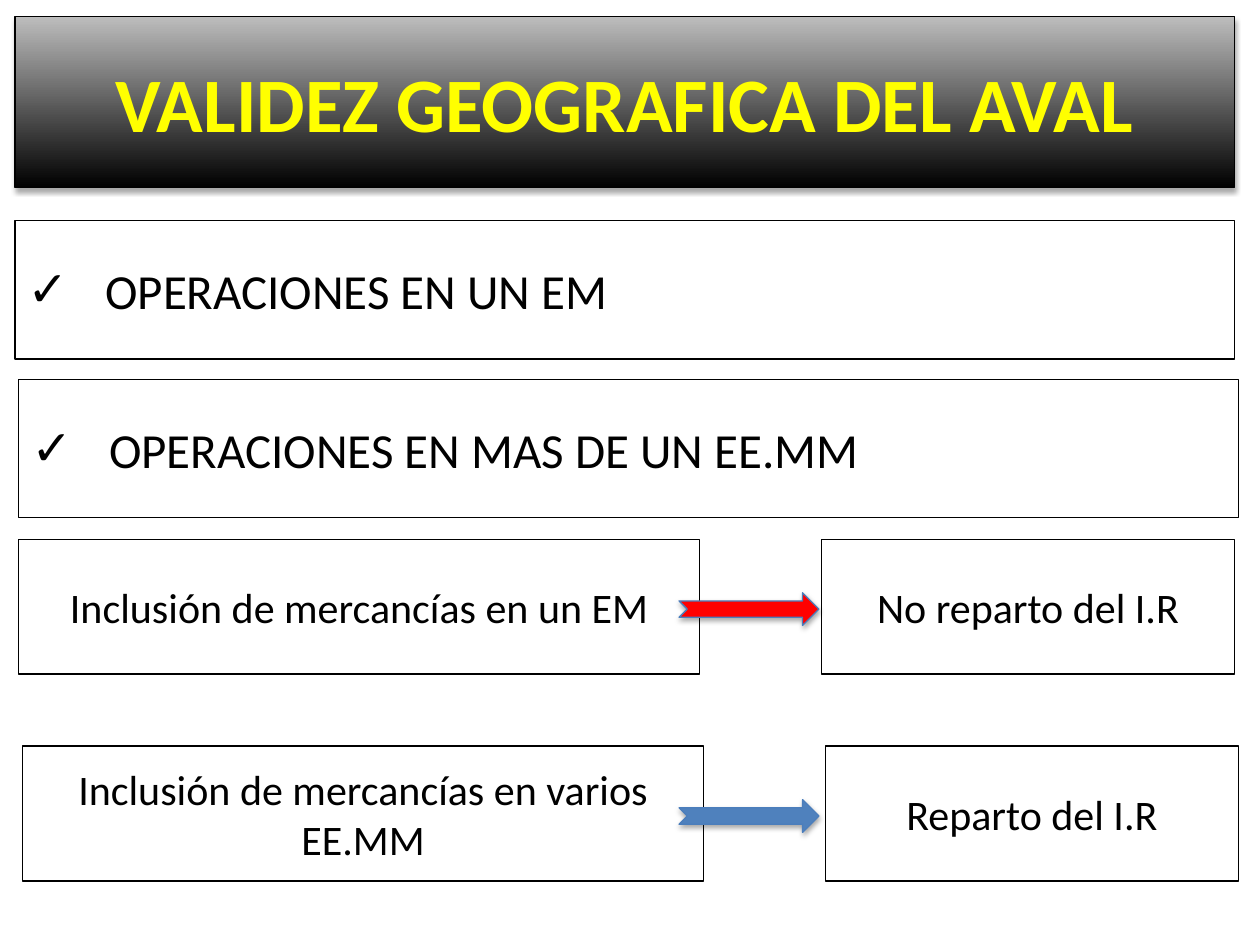
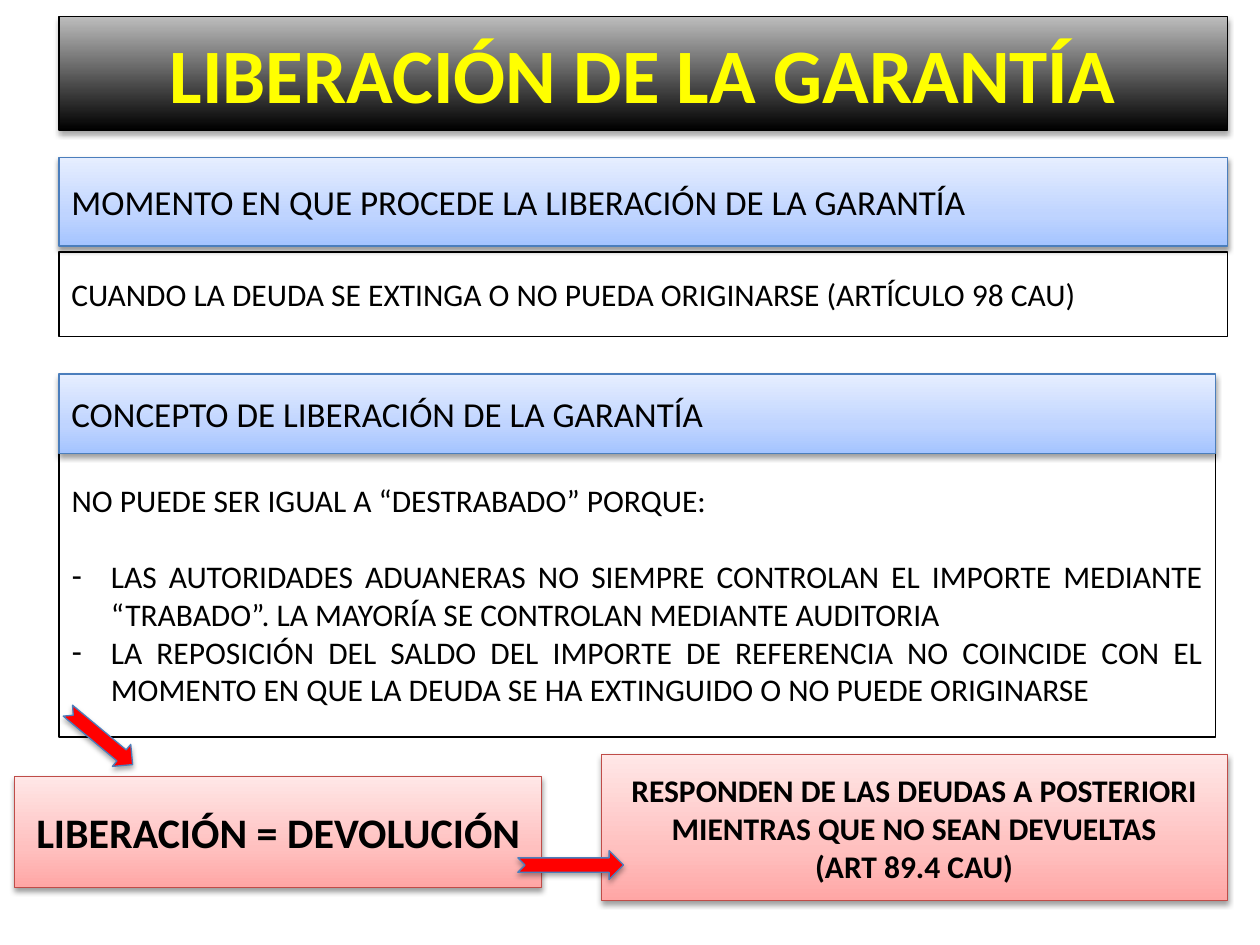
import pptx
import pptx.util
import pptx.dml.color
import pptx.enum.shapes
import pptx.enum.text
import pptx.oxml.ns
import lxml.etree
from dataclasses import dataclass

Cm = pptx.util.Cm
Pt = pptx.util.Pt
RGBColor = pptx.dml.color.RGBColor
MSO_SHAPE = pptx.enum.shapes.MSO_SHAPE
PP_ALIGN = pptx.enum.text.PP_ALIGN
qn = pptx.oxml.ns.qn


@dataclass(frozen=True)
class Theme:
    font: str = "Calibri"
    text: str = "000000"
    heading_text: str = "FFFF00"
    border: str = "000000"
    blue_line: str = "4B7EBC"
    red_line: str = "BF4C48"
    red: str = "FF0000"
    blue: str = "4F81BD"
    # Gradients run from bottom to top: (percent, colour)
    black_band: tuple = ((0, "000000"), (100, "BDBDBD"))
    blue_band: tuple = ((0, "A4C4FF"), (35, "BFD4FF"), (100, "E6EEFF"))
    red_band: tuple = ((0, "FFA6A5"), (35, "FFC0BF"), (100, "FFE7E7"))
    heading_size: int = 44
    check_size: int = 28
    box_size: int = 24
    section_size: int = 20
    detail_size: int = 18


theme = Theme()


def style_shape(shape, place, fill=None, line=theme.border, shadow=0):
    """Place a shape; fill is a colour, a tuple of gradient stops or None."""
    shape.left, shape.top, shape.width, shape.height = map(Cm, place)
    if fill is None:
        shape.fill.background()
    elif isinstance(fill, str):
        shape.fill.solid()
        shape.fill.fore_color.rgb = RGBColor.from_string(fill)
    else:
        shape.fill.gradient()
        shape.fill.gradient_angle = 90
        stops = shape.element.spPr.find(".//" + qn("a:gsLst"))
        stops.clear()
        for percent, colour in fill:
            stop = lxml.etree.SubElement(stops, qn("a:gs"), pos=str(percent * 1000))
            lxml.etree.SubElement(stop, qn("a:srgbClr"), val=colour)
    shape.line.color.rgb = RGBColor.from_string(line)
    shape.line.width = Pt(0.75)
    shape.shadow.inherit = False
    if shadow:
        effects = shape.element.spPr.find(qn("a:effectLst"))
        outer = lxml.etree.SubElement(
            effects, qn("a:outerShdw"), blurRad=str(Pt(3.1)), dist=str(Pt(1.8)),
            dir="5400000", rotWithShape="0")
        colour = lxml.etree.SubElement(outer, qn("a:srgbClr"), val="000000")
        lxml.etree.SubElement(colour, qn("a:alpha"), val=str(shadow * 1000))


def write_text(shape, lines, size, alignment=PP_ALIGN.CENTER, bold=False,
               colour=theme.text, bullet=None, indent=0, plain_lines=0):
    """Fill a shape with paragraphs; the first plain_lines carry no bullet."""
    frame = shape.text_frame
    frame.word_wrap = True
    frame.auto_size = pptx.enum.text.MSO_AUTO_SIZE.NONE
    frame.vertical_anchor = pptx.enum.text.MSO_ANCHOR.MIDDLE
    frame.text = "\n".join(lines)
    for number, paragraph in enumerate(frame.paragraphs):
        bulleted = bullet is not None and number >= plain_lines
        paragraph.alignment = alignment
        # One blank line's height between the introduction and the list
        starts_list = bulleted and number == plain_lines > 0
        paragraph.space_before = Pt(size * 1.2 if starts_list else 0)
        properties = paragraph._p.get_or_add_pPr()
        hanging = Cm(indent) if bulleted else 0
        properties.set("marL", str(hanging))
        properties.set("indent", str(-hanging))
        if bulleted:
            lxml.etree.SubElement(properties, qn("a:buChar"), char=bullet)
        else:
            lxml.etree.SubElement(properties, qn("a:buNone"))
        paragraph.font.name = theme.font
        paragraph.font.size = Pt(size)
        paragraph.font.bold = bold
        paragraph.font.color.rgb = RGBColor.from_string(colour)


presentation = pptx.Presentation()
presentation.slide_width = Cm(25.4)
presentation.slide_height = Cm(19.05)
title_and_content, two_contents = (presentation.slide_layouts[i] for i in (1, 3))
validity = presentation.slides.add_slide(two_contents)
release = presentation.slides.add_slide(title_and_content)

# Heading bands
for slide, place, heading in (
    (validity, (0.3, 0.33, 24.59, 3.45), "VALIDEZ GEOGRAFICA DEL AVAL"),
    (release, (1.19, 0.33, 23.55, 2.29), "LIBERACIÓN DE LA GARANTÍA"),
):
    title = slide.shapes.title
    style_shape(title, place, theme.black_band, shadow=35)
    write_text(title, [heading], theme.heading_size, bold=True,
               colour=theme.heading_text)

# Validity: the two kinds of operation
for index, left, top, operation in (
    (1, 0.3, 4.45, "OPERACIONES EN UN EM"),
    (2, 0.38, 7.65, "OPERACIONES EN MAS DE UN EE.MM"),
):
    check = validity.placeholders[index]
    style_shape(check, (left, top, 24.59, 2.79))
    write_text(check, [operation], theme.check_size, PP_ALIGN.LEFT,
               bullet="✓", indent=1.57)

# Validity: each case and its outcome
for left, top, case, outcome, arrow_colour in (
    (0.38, 10.87, "Inclusión de mercancías en un EM", "No reparto del I.R", theme.red),
    (0.46, 15.04, "Inclusión de mercancías en varios EE.MM", "Reparto del I.R", theme.blue),
):
    for box_left, width, text in ((left, 13.72, case), (left + 16.18, 8.33, outcome)):
        box = validity.shapes.add_shape(MSO_SHAPE.RECTANGLE, 0, 0, 0, 0)
        style_shape(box, (box_left, top, width, 2.72))
        write_text(box, [text], theme.box_size)
    arrow = validity.shapes.add_shape(MSO_SHAPE.NOTCHED_RIGHT_ARROW, 0, 0, 0, 0)
    style_shape(arrow, (13.69, top + 1.08, 2.82, 0.66), arrow_colour,
                theme.blue_line, shadow=35)

# Release: section bands
for top, width, height, section in (
    (3.18, 23.55, 1.78, "MOMENTO EN QUE PROCEDE LA LIBERACIÓN DE LA GARANTÍA"),
    (7.54, 23.32, 1.6, "CONCEPTO DE LIBERACIÓN DE LA GARANTÍA"),
):
    band = release.shapes.add_shape(MSO_SHAPE.RECTANGLE, 0, 0, 0, 0)
    style_shape(band, (1.19, top, width, height), theme.blue_band,
                theme.blue_line, shadow=38)
    write_text(band, [section], theme.section_size, PP_ALIGN.JUSTIFY)

# Release: moment and reasons
moment = release.shapes.add_shape(MSO_SHAPE.RECTANGLE, 0, 0, 0, 0)
style_shape(moment, (1.19, 5.08, 23.55, 1.7))
write_text(moment, ["CUANDO LA DEUDA SE EXTINGA O NO PUEDA ORIGINARSE (ARTÍCULO 98 CAU)"],
           theme.detail_size, PP_ALIGN.JUSTIFY)

reasons = release.placeholders[1]
style_shape(reasons, (1.19, 9.12, 23.32, 5.74))
write_text(reasons, [
    "NO PUEDE SER IGUAL A “DESTRABADO” PORQUE:",
    "LAS AUTORIDADES ADUANERAS NO SIEMPRE CONTROLAN EL IMPORTE MEDIANTE "
    "“TRABADO”. LA MAYORÍA SE CONTROLAN MEDIANTE AUDITORIA",
    "LA REPOSICIÓN DEL SALDO DEL IMPORTE DE REFERENCIA NO COINCIDE CON EL "
    "MOMENTO EN QUE LA DEUDA SE HA EXTINGUIDO O NO PUEDE ORIGINARSE",
], theme.detail_size, PP_ALIGN.JUSTIFY, bullet="-", indent=0.79, plain_lines=1)

# Release: conclusions
for place, size, lines in (
    ((0.3, 15.65, 10.62, 2.24), theme.box_size, ["LIBERACIÓN = DEVOLUCIÓN"]),
    ((12.12, 15.21, 12.62, 2.95), theme.detail_size,
     ["RESPONDEN DE LAS DEUDAS A POSTERIORI MIENTRAS QUE NO SEAN DEVUELTAS",
      "(ART 89.4 CAU)"]),
):
    conclusion = release.shapes.add_shape(MSO_SHAPE.RECTANGLE, 0, 0, 0, 0)
    style_shape(conclusion, place, theme.red_band, theme.red_line, shadow=38)
    write_text(conclusion, lines, size, bold=True)

# Release: arrows between the steps
for place, rotation in (((1.17, 14.58, 1.7, 0.58), 39.8), ((10.44, 17.15, 2.13, 0.58), 0)):
    arrow = release.shapes.add_shape(MSO_SHAPE.NOTCHED_RIGHT_ARROW, 0, 0, 0, 0)
    style_shape(arrow, place, theme.red, theme.blue_line, shadow=35)
    arrow.rotation = rotation

presentation.save("out.pptx")
